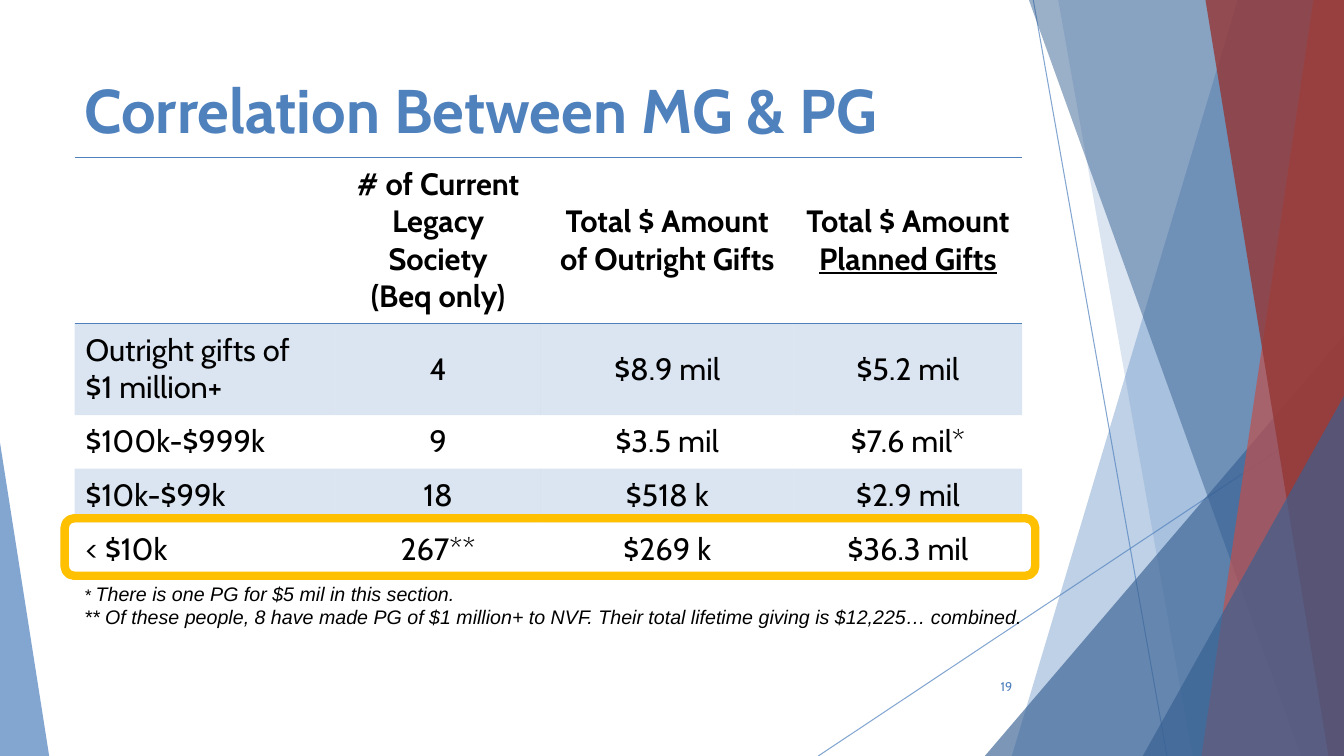
import pptx
import pptx.util
import pptx.dml.color
import pptx.enum.shapes
import pptx.enum.text
import pptx.oxml
import pptx.oxml.ns
from lxml import etree

Cm = pptx.util.Cm
Pt = pptx.util.Pt
ALIGN = pptx.enum.text.PP_ALIGN
ANCHOR = pptx.enum.text.MSO_ANCHOR
SHAPES = pptx.enum.shapes.MSO_SHAPE

THEME = {
    "blue": "4F81BD", "navy": "376092", "red": "C0504D", "maroon": "953735",
    "gold": "FFC000", "text": "000000",
    "font": "Cabin", "note_font": "Arial",
    "title": 44, "table": 22, "note": 14, "note_mark": 12, "number": 9,
}

TITLE = "Correlation Between MG & PG"
PAGE_NUMBER = "19"
ROWS = [
    ["", "# of Current Legacy Society\n(Beq only)", "Total $ Amount of Outright Gifts",
     "Total $ Amount _Planned Gifts_"],
    ["Outright gifts of\n$1 million+", "4", "$8.9 mil", "$5.2 mil"],
    ["$100k-$999k", "9", "$3.5 mil", "$7.6 mil*"],
    ["$10k-$99k", "18", "$518 k", "$2.9 mil"],
    ["< $10k", "267**", "$269 k", "$36.3 mil"],
]
NOTES = [
    [("* ", "note_mark"), ("There is one PG for $5 mil in this section.", "note")],
    [("** Of these people, 8 have made PG of $1 million+ to NVF. "
      "Their total lifetime giving is $12,225… combined.", "note")],
]

WIDTH, HEIGHT = 33.87, 19.05
LEFT, TABLE_TOP = 1.88, 3.96
COLUMN_WIDTHS = [6.57, 5.18, 6.37, 5.76]
ROW_HEIGHTS = [4.19, 2.31, 1.35, 1.35, 1.35]
TABLE_WIDTH = sum(COLUMN_WIDTHS)

THIN_LINES = [(26.04, 0, 29.41, HEIGHT), (WIDTH, 10.24, 20.62, HEIGHT)]
DECORATION = [
    ("panel", (31.19, 25.5), "blue", 36),
    ("panel", (26.67, 30.05), "blue", 20),
    ("triangle", (24.82, 8.46, WIDTH, 1), "navy", 66),
    ("panel", (25.93, 32.79), "navy", 50),
    ("panel", (33.1, 30.28), "red", 70),
    ("panel", (30.38, 33.48), "maroon", 80),
    ("triangle", (28.8, 9.98, WIDTH, 1), "navy", 66),
    ("triangle", (0, 11.15, 1.24, 0), "blue", 70),
]


def color(name):
    return pptx.dml.color.RGBColor.from_string(THEME[name])


def set_opacity(element, percent):
    for rgb in element.iter(pptx.oxml.ns.qn("a:srgbClr")):
        alpha = etree.SubElement(rgb, pptx.oxml.ns.qn("a:alpha"))
        alpha.set("val", str(percent * 1000))


def style_font(font, size, color_name, name="font"):
    font.name = THEME[name]
    font.color.rgb = color(color_name)
    if size:
        font.size = Pt(THEME[size])


def add_thin_line(slide, ends):
    line = slide.shapes.add_connector(
        pptx.enum.shapes.MSO_CONNECTOR.STRAIGHT, *[Cm(value) for value in ends])
    line.line.color.rgb = color("blue")
    line.line.width = Pt(0.75)
    properties = line._element.spPr
    set_opacity(properties, 70)
    etree.SubElement(properties, pptx.oxml.ns.qn("a:effectLst"))


def add_decoration(slide, kind, place, color_name, opacity):
    if kind == "panel":
        top_x, bottom_x = place
        builder = slide.shapes.build_freeform(Cm(top_x), 0)
        corners = [(WIDTH, 0), (WIDTH, HEIGHT), (bottom_x, HEIGHT)]
        builder.add_line_segments([(Cm(x), Cm(y)) for x, y in corners], close=True)
        shape = builder.convert_to_shape()
    else:
        left, top, right, apex = place
        shape = slide.shapes.add_shape(
            SHAPES.ISOSCELES_TRIANGLE, Cm(left), Cm(top), Cm(right - left), Cm(HEIGHT - top))
        shape.adjustments[0] = apex
    shape.shadow.inherit = False
    shape.fill.solid()
    shape.fill.fore_color.rgb = color(color_name)
    shape.line.fill.background()
    set_opacity(shape._element.spPr, opacity)


def add_text_box(slide, left, top, width, height):
    box = slide.shapes.add_textbox(Cm(left), Cm(top), Cm(width), Cm(height))
    box.text_frame.word_wrap = True
    return box.text_frame


def add_border(cell, side):
    namespace = pptx.oxml.ns.nsdecls("a")
    border = pptx.oxml.parse_xml(
        f'<a:{side} {namespace} w="12700"><a:solidFill>'
        f'<a:srgbClr val="{THEME["blue"]}"/></a:solidFill></a:{side}>')
    cell._tc.get_or_add_tcPr().insert(0, border)


def fill_cell(cell, text, row, column):
    cell.vertical_anchor = ANCHOR.MIDDLE
    cell.margin_left = cell.margin_right = Cm(0.28)
    cell.margin_top = cell.margin_bottom = Cm(0.15)
    if row % 2:
        cell.fill.solid()
        cell.fill.fore_color.rgb = color("blue")
        set_opacity(cell._tc.tcPr, 20)
    else:
        cell.fill.background()
    if row in (0, len(ROWS) - 1):
        add_border(cell, "lnB")
    if row == 0:
        add_border(cell, "lnT")
    for index, line in enumerate(text.split("\n")):
        frame = cell.text_frame
        paragraph = frame.add_paragraph() if index else frame.paragraphs[0]
        paragraph.alignment = ALIGN.CENTER if column else ALIGN.LEFT
        style_font(paragraph.font, "table", "text")
        paragraph.font.bold = row == 0
        for part, words in enumerate(line.split("_")):
            if words:
                run = paragraph.add_run()
                run.text = words
                if part % 2:
                    run.font.underline = True


def add_gift_table(slide):
    frame = slide.shapes.add_table(
        len(ROWS), len(COLUMN_WIDTHS), Cm(LEFT), Cm(TABLE_TOP),
        Cm(TABLE_WIDTH), Cm(sum(ROW_HEIGHTS)))
    table = frame.table
    table.horz_banding = False
    style = table._tbl.tblPr.find(pptx.oxml.ns.qn("a:tableStyleId"))
    style.text = "{2D5ABB26-0587-4C30-8999-92F81FD0307C}"
    for column, width in zip(table.columns, COLUMN_WIDTHS):
        column.width = Cm(width)
    for row, height in zip(table.rows, ROW_HEIGHTS):
        row.height = Cm(height)
    for row, texts in enumerate(ROWS):
        for column, text in enumerate(texts):
            fill_cell(table.cell(row, column), text, row, column)


def add_notes(slide):
    frame = add_text_box(slide, LEFT, 14.53, 26.85, 1.45)
    for index, parts in enumerate(NOTES):
        paragraph = frame.add_paragraph() if index else frame.paragraphs[0]
        style_font(paragraph.font, None, "text", "note_font")
        paragraph.font.italic = True
        for words, size in parts:
            run = paragraph.add_run()
            run.text = words
            run.font.size = Pt(THEME[size])


def add_highlight(slide):
    shape = slide.shapes.add_shape(
        SHAPES.ROUNDED_RECTANGLE, Cm(1.63), Cm(13.06), Cm(24.46), Cm(1.45))
    shape.shadow.inherit = False
    shape.fill.background()
    shape.line.color.rgb = color("gold")
    shape.line.width = Pt(6)


def main():
    presentation = pptx.Presentation()
    presentation.slide_width = Cm(WIDTH)
    presentation.slide_height = Cm(HEIGHT)
    slide = presentation.slides.add_slide(presentation.slide_layouts[6])

    for ends in THIN_LINES:
        add_thin_line(slide, ends)
    for item in DECORATION:
        add_decoration(slide, *item)

    title = add_text_box(slide, LEFT, 1.7, TABLE_WIDTH, 3.66).paragraphs[0]
    title.text = TITLE
    style_font(title.font, "title", "blue")
    title.font.bold = True

    number_frame = add_text_box(slide, 23.85, 16.79, 1.91, 1.02)
    number_frame.vertical_anchor = ANCHOR.MIDDLE
    number = number_frame.paragraphs[0]
    number.text = PAGE_NUMBER
    number.alignment = ALIGN.RIGHT
    style_font(number.font, "number", "blue")

    add_gift_table(slide)
    add_notes(slide)
    add_highlight(slide)
    presentation.save("out.pptx")


if __name__ == "__main__":
    main()
